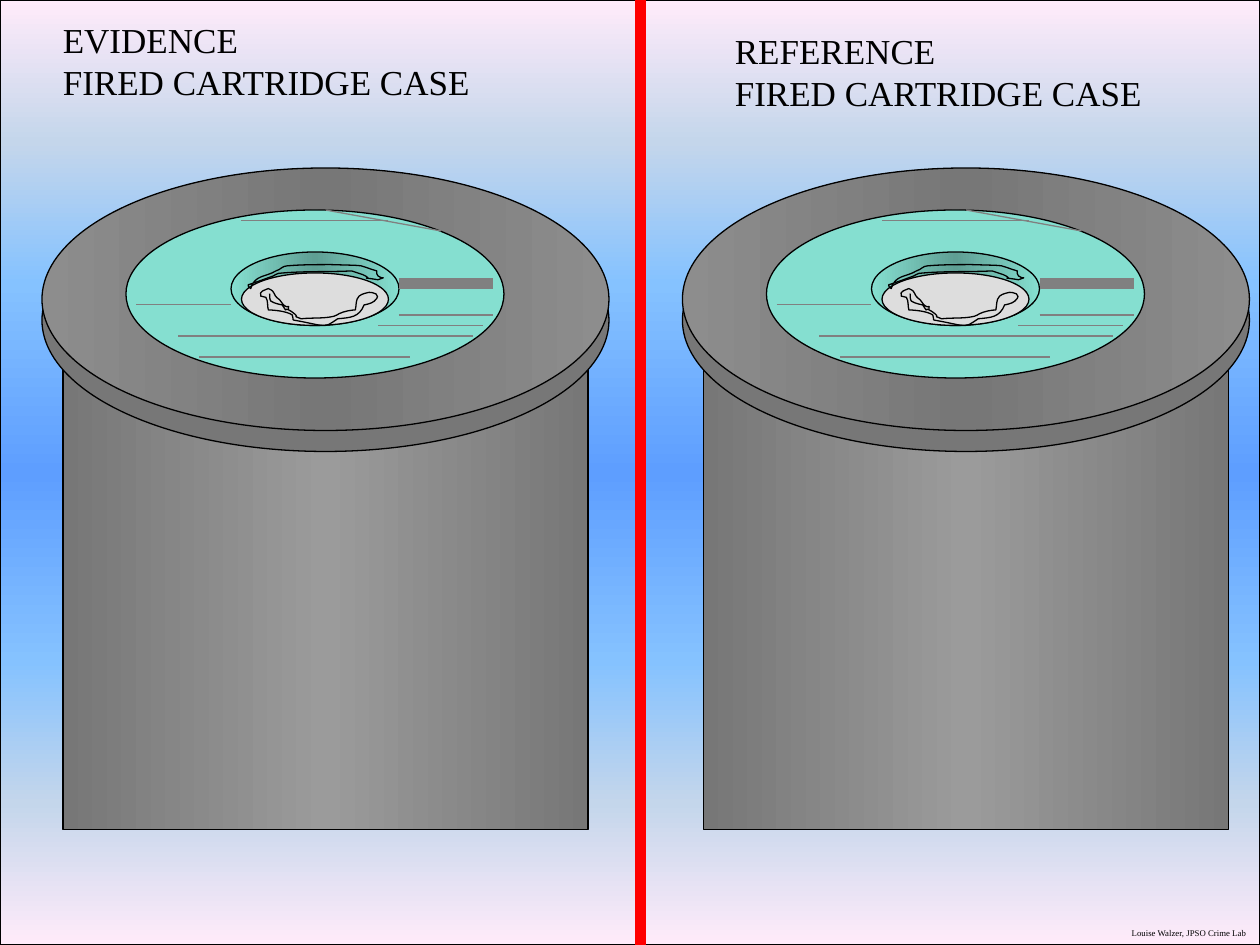
from copy import deepcopy

from pptx import Presentation
from pptx.dml.color import RGBColor
from pptx.enum.shapes import MSO_CONNECTOR, MSO_SHAPE
from pptx.enum.text import MSO_AUTO_SIZE
from pptx.oxml.ns import qn
from pptx.util import Emu, Pt

RECT, OVAL = MSO_SHAPE.RECTANGLE, MSO_SHAPE.OVAL
STRAIGHT = MSO_CONNECTOR.STRAIGHT
PX = 7620  # 120 px to the inch
W, H = 1200, 900
FONT = "Times New Roman"
THIN, THICK = 0.75, 6

C = {"black": "000000", "red": "FF0000", "mark": "808080", "pink": "FFEBFA",
     "mist": "C4D6EB", "sky": "85C2FF", "blue": "5E9EFF", "steel": "777777",
     "shine": "9B9B9B", "rim": "8D8D8D", "primer": "85DFD0", "shade": "85DFD0",
     "pin": "DDDDDD"}
SHADES = {"shade": "46275"}  # darkening in thousandths of a percent

# Content: text lines, left, top, width, height, size
TEXTS = [
    (["EVIDENCE", "FIRED CARTRIDGE CASE"], 48, 12, 414, 92, 20),
    (["REFERENCE", "FIRED CARTRIDGE CASE"], 688, 22, 414, 92, 20),
    (["Louise Walzer, JPSO Crime Lab"], 1066, 878, 133, 22, 5),
]

# Gradient stops: percent, colour
SKY = [(0, "pink"), (15, "mist"), (30, "sky"), (50, "blue"),
       (70, "sky"), (85, "mist"), (100, "pink")]
BODY = [(0, "steel"), (50, "shine"), (100, "steel")]
RIM = [(0, "rim"), (50, "steel"), (100, "rim")]
CRATER = [(0, "primer"), (50, "shade"), (100, "primer")]

# One cartridge case: shape, left, top, width, height, fill
CASE_LEFTS = [0, 610]
CASE_PARTS = [
    (RECT, 60, 340, 500, 450, BODY),
    (OVAL, 40, 180, 540, 250, "steel"),
    (OVAL, 40, 160, 540, 250, RIM),
    (OVAL, 120, 200, 360, 160, "primer"),
    (OVAL, 220, 240, 160, 70, CRATER),
    (OVAL, 230, 260, 140, 50, "pin"),
]
# Breech marks: x1, y1, x2, y2, width
MARKS = [
    (380, 270, 470, 270, THICK), (380, 300, 470, 300, THIN),
    (360, 310, 460, 310, THIN), (130, 290, 220, 290, THIN),
    (170, 320, 450, 320, THIN), (190, 340, 390, 340, THIN),
    (310, 200, 420, 220, THIN), (230, 210, 370, 210, THIN),
]
# Firing pin scratches: closed, start, Bezier curves, in finer units
SCRATCH_UNIT = 1.2
SCRATCHES = [
    (True, (199, 229), [
        (202, 218, 211, 220, 219, 215), (223, 214, 224, 211, 228, 211),
        (239, 210, 251, 210, 263, 210), (295, 211, 282, 210, 299, 215),
        (299, 217, 299, 218, 300, 219), (303, 222, 308, 219, 300, 222),
        (281, 219, 299, 223, 288, 218), (285, 217, 279, 215, 279, 215),
        (260, 216, 240, 215, 221, 217), (219, 217, 218, 219, 217, 219),
        (214, 220, 198, 226, 197, 226), (196, 227, 198, 228, 199, 229)]),
    (False, (214, 233), [
        (214, 235, 214, 238, 215, 239), (218, 241, 224, 242, 224, 242),
        (230, 251, 223, 242, 231, 247), (241, 254, 229, 249, 239, 253),
        (248, 252, 257, 253, 265, 251), (267, 251, 268, 249, 269, 249),
        (273, 247, 279, 246, 282, 246), (283, 242, 282, 238, 285, 235),
        (287, 233, 293, 232, 293, 232), (295, 232, 304, 233, 297, 239),
        (295, 241, 289, 242, 289, 242), (285, 252, 278, 252, 268, 253),
        (256, 261, 261, 259, 233, 254), (232, 254, 233, 251, 232, 250),
        (228, 247, 217, 246, 213, 246), (212, 243, 213, 239, 211, 236),
        (210, 235, 208, 236, 207, 235), (205, 231, 211, 230, 213, 229),
        (220, 232, 215, 233, 222, 238), (223, 239, 224, 241, 225, 242),
        (230, 246, 229, 240, 229, 246)]),
]


def px(*vals):
    return [Emu(round(v * PX)) for v in vals]


def rgb(name):
    return RGBColor.from_string(C[name])


def set_line(line, color, width):
    line.color.rgb = rgb(color)
    line.width = Pt(width)


def set_gradient(sp, stops, angle):
    sp.fill.gradient()
    sp.fill.gradient_angle = angle
    gs_list = sp._element.spPr.find(qn("a:gradFill")).find(qn("a:gsLst"))
    for _ in range(len(stops) - len(gs_list)):
        gs_list.append(deepcopy(gs_list[0]))
    for stop, gs, (pos, color) in zip(sp.fill.gradient_stops, gs_list, stops):
        stop.position = pos / 100
        stop.color.rgb = rgb(color)
        if color in SHADES:
            clr = gs.find(qn("a:srgbClr"))
            clr.append(clr.makeelement(qn("a:shade"), {"val": SHADES[color]}))


def add_shape(s, kind, x, y, w, h, fill, angle=0):
    sp = s.shapes.add_shape(kind, *px(x, y, w, h))
    sp.shadow.inherit = False
    if isinstance(fill, str):
        sp.fill.solid()
        sp.fill.fore_color.rgb = rgb(fill)
    else:
        set_gradient(sp, fill, angle)
    set_line(sp.line, "black", THIN)


def add_line(s, x1, y1, x2, y2, color, width):
    ln = s.shapes.add_connector(STRAIGHT, *px(x1, y1, x2, y2))
    set_line(ln.line, color, width)
    sp_pr = ln._element.spPr
    sp_pr.append(sp_pr.makeelement(qn("a:effectLst"), {}))


def add_scratch(s, dx, closed, start, curves):
    fb = s.shapes.build_freeform(*start, scale=PX * SCRATCH_UNIT)
    fb.add_line_segments([c[i:i + 2] for c in curves for i in (0, 2, 4)], close=closed)
    sp = fb.convert_to_shape(*px(dx, 0))
    # Every three points become one Bezier curve
    segments = list(sp._element.iter(qn("a:lnTo")))
    for i in range(0, len(segments), 3):
        curve = segments[i].makeelement(qn("a:cubicBezTo"), {})
        segments[i].addprevious(curve)
        for seg in segments[i:i + 3]:
            curve.append(seg[0])
            seg.getparent().remove(seg)
    sp.shadow.inherit = False
    sp.fill.background()
    set_line(sp.line, "black", THIN)


def add_case(s, dx):
    for kind, x, y, w, h, fill in CASE_PARTS:
        add_shape(s, kind, x + dx, y, w, h, fill)
    for x1, y1, x2, y2, width in MARKS:
        add_line(s, x1 + dx, y1, x2 + dx, y2, "mark", width)
    for scratch in SCRATCHES:
        add_scratch(s, dx, *scratch)


def add_text(s, lines, x, y, w, h, size):
    tf = s.shapes.add_textbox(*px(x, y, w, h)).text_frame
    tf.word_wrap = False
    tf.auto_size = MSO_AUTO_SIZE.SHAPE_TO_FIT_TEXT
    for i, line in enumerate(lines):
        p = tf.add_paragraph() if i else tf.paragraphs[0]
        r = p.add_run()
        r.text = line
        r.font.name = FONT
        r.font.size = Pt(size)
        r.font.color.rgb = rgb("black")


def main():
    prs = Presentation()
    prs.slide_width, prs.slide_height = px(W, H)
    s = prs.slides.add_slide(prs.slide_layouts[6])

    # Background
    add_shape(s, RECT, 0, 0, W, H, SKY, 270)
    # Two cartridge cases with a divider between them
    for dx in CASE_LEFTS:
        add_case(s, dx)
    add_line(s, 610, 0, 610, H, "red", THICK)
    # Headings and credit
    for text in TEXTS:
        add_text(s, *text)

    prs.save("out.pptx")


if __name__ == "__main__":
    main()
